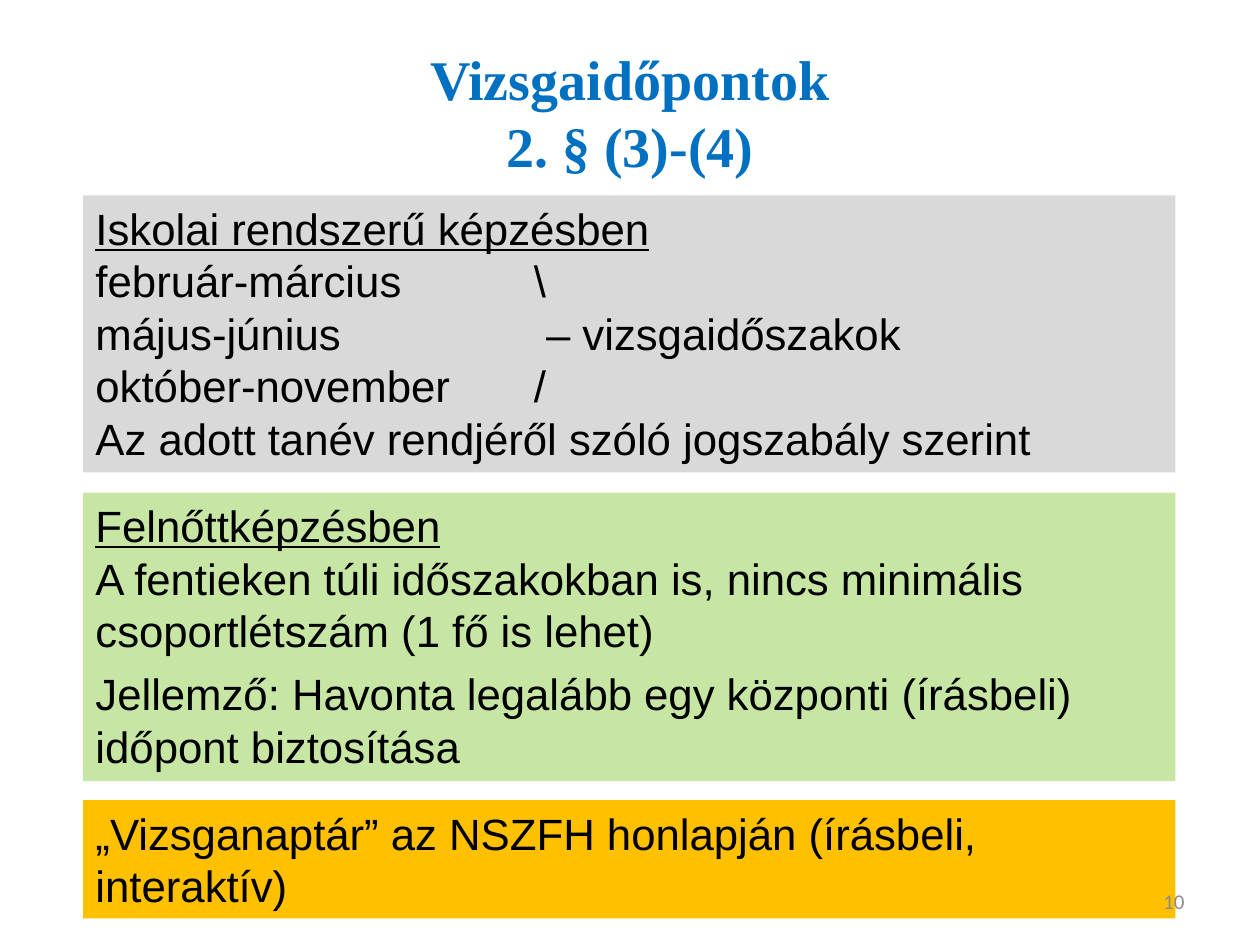
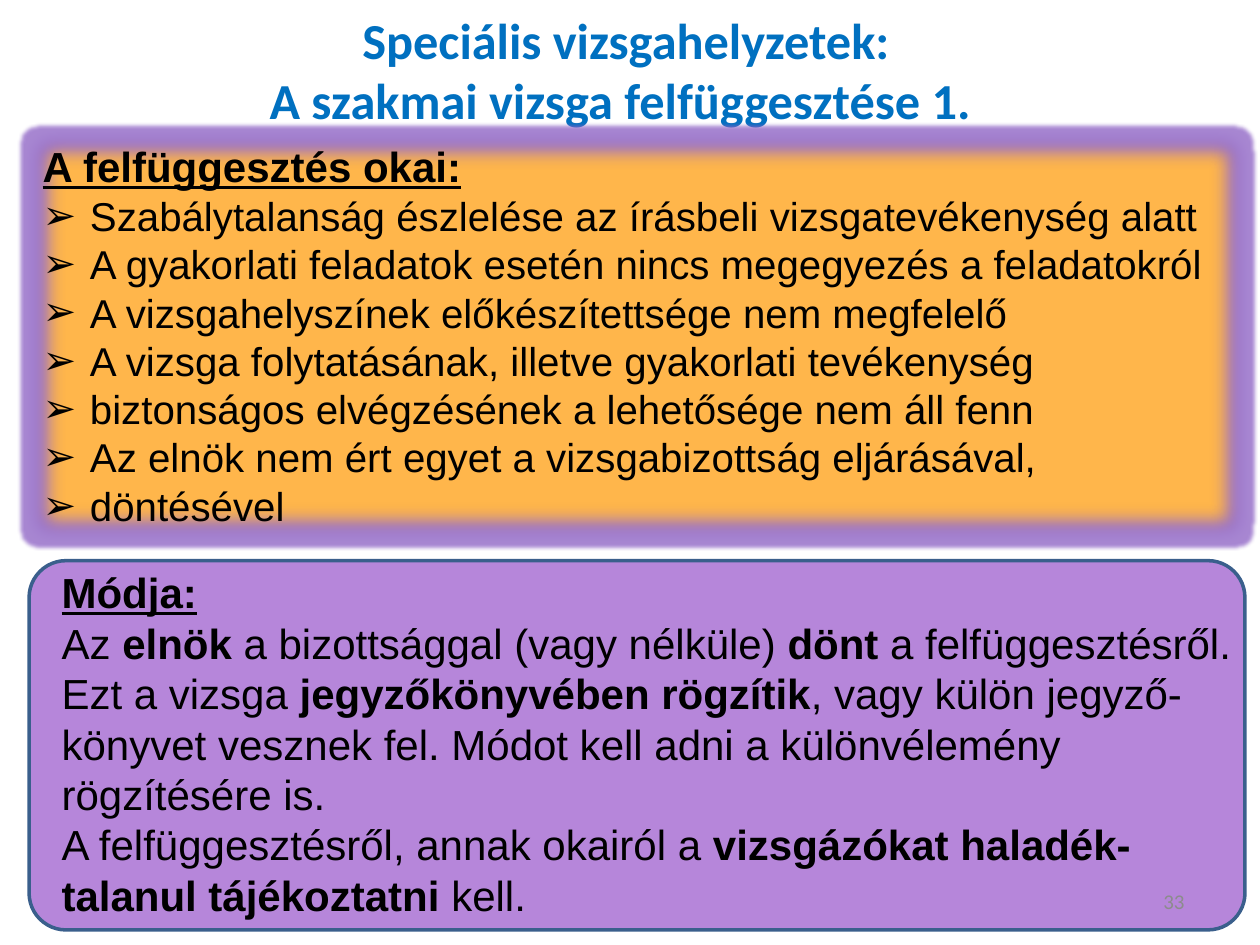
"""Builds two slides on exam dates and on suspending a vocational exam."""
from lxml import etree
from pptx import Presentation
from pptx import util as u
from pptx.dml.color import RGBColor
from pptx.enum import shapes, text
from pptx.oxml.ns import qn

Pt = u.Pt
COLORS = {
    "title": "0070C0", "text": "000000", "number": "8C8C8C",
    "school": "D9D9D9", "adult": "C7E6A4", "calendar": "FFC000",
    "reasons": "FFB64B", "glow": "8B5FC4", "method": "B686DA", "border": "3A5F8C",
}
LEFT, CENTER, RIGHT = text.PP_ALIGN.LEFT, text.PP_ALIGN.CENTER, text.PP_ALIGN.RIGHT


def rgb(name):
    return RGBColor.from_string(COLORS[name])


def add_el(parent, tag, **attrs):
    return etree.SubElement(parent, qn(tag), {k: str(v) for k, v in attrs.items()})


def add_text(tf, content, size=25, font="Arial", color="text", bold=False, underline=False,
             align=LEFT, before=0, indent=0, bullet=None, tab=None):
    """Appends a paragraph; parts between asterisks switch weight."""
    p = tf.paragraphs[0]
    if p.runs:
        p = tf.add_paragraph()
    p.alignment, p.space_before = align, Pt(before)
    pPr = p._p.get_or_add_pPr()
    if indent:
        pPr.set("marL", str(Pt(indent)))
    if bullet:
        pPr.set("indent", str(-Pt(indent)))
        add_el(pPr, "a:buFont", typeface="Wingdings" if bullet == "Ø" else font)
        add_el(pPr, "a:buChar", char=bullet)
    if tab:
        add_el(add_el(pPr, "a:tabLst"), "a:tab", pos=Pt(tab), algn="l")
    for i, line in enumerate(content.split("\n")):
        if i:
            p.add_line_break()
        for j, part in enumerate(line.split("*")):
            if part:
                r = p.add_run()
                r.text = part
                r.font.size, r.font.name = Pt(size), font
                r.font.bold, r.font.underline = bold != (j % 2 == 1), underline
                r.font.color.rgb = rgb(color)


def add_frame(s, box, anchor=text.MSO_ANCHOR.TOP):
    tf = s.shapes.add_textbox(*map(Pt, box)).text_frame
    tf.word_wrap, tf.vertical_anchor = True, anchor
    return tf


def add_panel(s, box, fill, kind=shapes.MSO_SHAPE.RECTANGLE):
    sp = s.shapes.add_shape(kind, *map(Pt, box))
    sp.shadow.inherit = False
    sp.fill.solid()
    sp.fill.fore_color.rgb = rgb(fill)
    sp.line.fill.background()
    sp.text_frame.word_wrap = True
    sp.text_frame.vertical_anchor = text.MSO_ANCHOR.TOP
    return sp


def add_title(s, box, content, **fmt):
    tf = add_frame(s, box, text.MSO_ANCHOR.MIDDLE)
    add_text(tf, content, color="title", bold=True, align=CENTER, **fmt)


def add_number(s, number):
    tf = add_frame(s, (516, 500.4, 168, 28.8), text.MSO_ANCHOR.MIDDLE)
    add_text(tf, number, size=12, font="Calibri", color="number", align=RIGHT)


def add_glow(sp, radius, soft):
    effects = sp._element.spPr.find(qn("a:effectLst"))
    color = add_el(add_el(effects, "a:glow", rad=Pt(radius)), "a:srgbClr", val=COLORS["glow"])
    add_el(color, "a:alpha", val=75000)
    add_el(effects, "a:softEdge", rad=Pt(soft))


def add_reasons(s, box, heading, reasons):
    sp = add_panel(s, box, "reasons")
    add_glow(sp, 5, 10)
    add_text(sp.text_frame, heading, size=24, bold=True, underline=True)
    for reason in reasons:
        add_text(sp.text_frame, reason, size=23, indent=27, bullet="➢")


def add_method(s, box, heading, lines):
    sp = add_panel(s, box, "method", shapes.MSO_SHAPE.ROUNDED_RECTANGLE)
    sp.adjustments[0] = 0.1
    sp.line.color.rgb, sp.line.width = rgb("border"), Pt(2)
    tf = add_frame(s, box)
    add_text(tf, heading, size=24, bold=True, underline=True, indent=11.5)
    for line in lines:
        add_text(tf, line, size=24, indent=11.5)


def build_dates(s):
    add_title(s, (36, 21.6, 648, 84.2), "Vizsgaidőpontok\n2. § (3)-(4)",
              size=32, font="Times New Roman")
    panels = [
        ("school", 111.6, 158.4, [
            ("Iskolai rendszerű képzésben", {"underline": True}),
            ("február-március\t\\", {"tab": 250.5}),
            ("május-június\t– vizsgaidőszakok", {"tab": 257.5}),
            ("október-november\t/", {"tab": 250.5}),
            ("Az adott tanév rendjéről szóló jogszabály szerint", {})]),
        ("adult", 281.5, 164.9, [
            ("Felnőttképzésben", {"underline": True}),
            ("A fentieken túli időszakokban is, nincs minimális "
             "csoportlétszám (1 fő is lehet)", {}),
            ("Jellemző: Havonta legalább egy központi (írásbeli) "
             "időpont biztosítása", {"before": 6})]),
        ("calendar", 457.2, 67.7, [
            ("„Vizsganaptár” az NSZFH honlapján (írásbeli, interaktív)", {})]),
    ]
    for fill, top, height, lines in panels:
        sp = add_panel(s, (47.5, top, 624.2, height), fill)
        for content, fmt in lines:
            add_text(sp.text_frame, content, **fmt)
    add_number(s, "10")


def build_suspension(s):
    add_title(s, (33.8, 11.5, 648, 56.2),
              "Speciális vizsgahelyzetek:\nA szakmai vizsga felfüggesztése 1. ",
              size=28.8, font="Calibri")
    add_reasons(s, (17.3, 77, 694.8, 231.1), "A felfüggesztés okai:", [
        "Szabálytalanság észlelése az írásbeli vizsgatevékenység alatt",
        "A gyakorlati feladatok esetén nincs megegyezés a feladatokról",
        "A vizsgahelyszínek előkészítettsége nem megfelelő",
        "A vizsga folytatásának, illetve gyakorlati tevékenység",
        "biztonságos elvégzésének a lehetősége nem áll fenn",
        "Az elnök nem ért egyet a vizsgabizottság eljárásával,",
        "döntésével"])
    add_method(s, (16.6, 320.4, 694.8, 211), "Módja:", [
        "Az *elnök* a bizottsággal (vagy nélküle) *dönt* a felfüggesztésről.",
        "Ezt a vizsga *jegyzőkönyvében rögzítik*, vagy külön jegyző-",
        "könyvet vesznek fel. Módot kell adni a különvélemény",
        "rögzítésére is.",
        "A felfüggesztésről, annak okairól a *vizsgázókat haladék-talanul tájékoztatni* kell."])
    add_number(s, "33")


def main():
    prs = Presentation()
    prs.slide_width, prs.slide_height = Pt(720), Pt(540)
    for build in (build_dates, build_suspension):
        build(prs.slides.add_slide(prs.slide_layouts[6]))
    prs.save("out.pptx")


if __name__ == "__main__":
    main()
